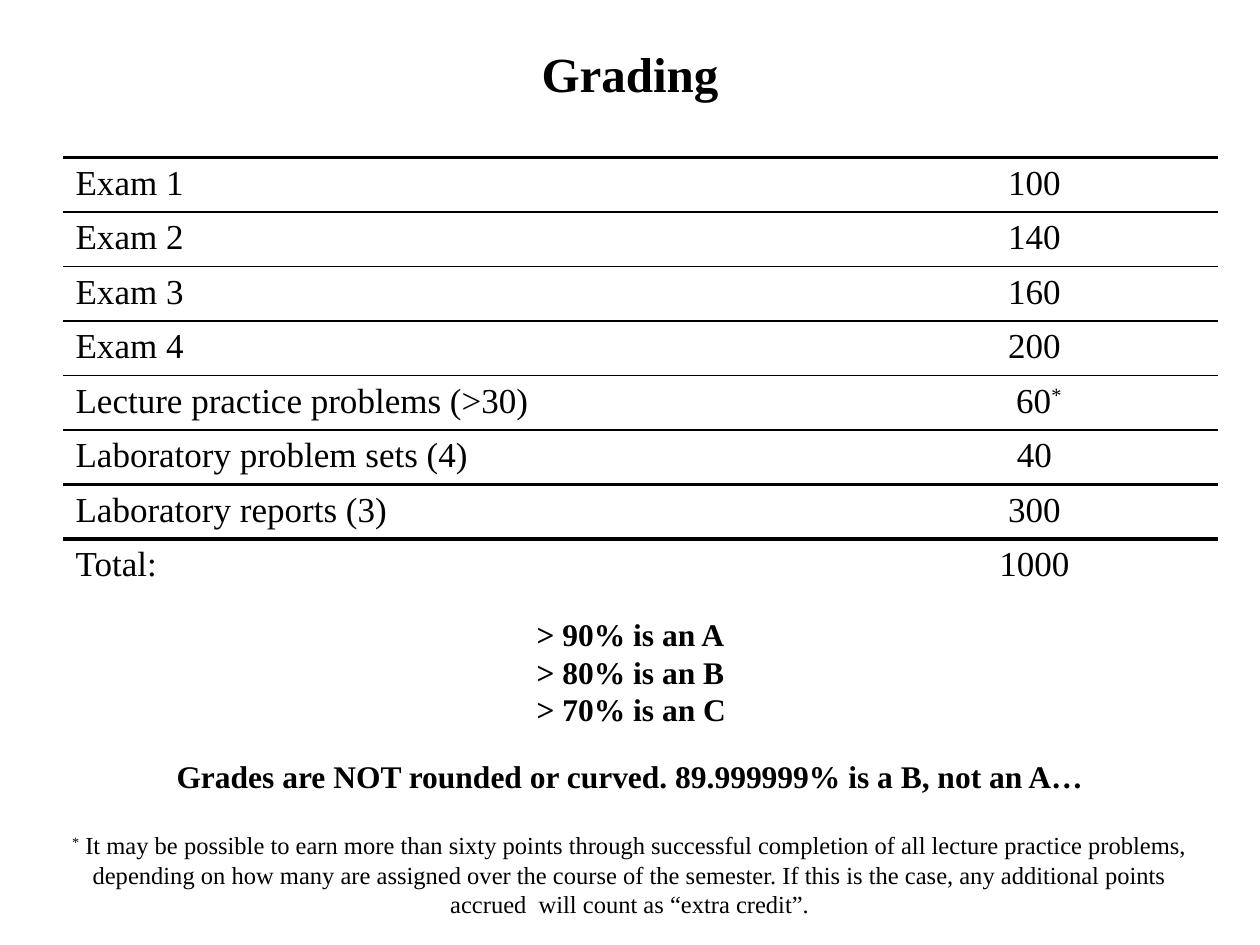
from lxml.etree import SubElement
from pptx import Presentation
from pptx.dml.color import RGBColor
from pptx.enum.text import MSO_ANCHOR as Anchor, MSO_AUTO_SIZE as AutoSize, PP_ALIGN as Align
from pptx.oxml.ns import qn
from pptx.util import Inches, Pt

BLACK = RGBColor(0x00, 0x00, 0x00)
FONT = "Times New Roman"
THIN, THICK = 1, 2.25

GRADES = [
    ("Exam 1", "100"),
    ("Exam 2", "140"),
    ("Exam 3", "160"),
    ("Exam 4", "200"),
    ("Lecture practice problems (>30)", " 60*"),
    ("Laboratory problem sets (4)", "40"),
    ("Laboratory reports (3)", "300"),
    ("Total:", "1000"),
]
# Line widths above each row, and none below the last
RULES = [THICK] + [THIN] * 5 + [THICK] * 2 + [None]

CUTOFFS = ["> 90% is an A", "> 80% is an B", "> 70% is an C"]
WARNING = ["Grades are NOT rounded or curved. 89.999999% is a B, not an A…"]
FOOTNOTE = [
    "* It may be possible to earn more than sixty points through successful "
    "completion of all lecture practice problems,",
    "depending on how many are assigned over the course of the semester. "
    "If this is the case, any additional points",
    "accrued  will count as “extra credit”.",
]


def write_paragraph(para, text, size, bold=False, align=Align.LEFT):
    """Fill a paragraph, raising any asterisk to superscript."""
    para.alignment = align
    before, star, after = text.partition("*")
    for part in filter(None, (before, star, after)):
        span = para.add_run()
        span.text = part
        span.font.name = FONT
        span.font.size = Pt(size)
        span.font.bold = bold
        span.font.color.rgb = BLACK
        if part == "*":
            span._r.get_or_add_rPr().set("baseline", "30000")


def add_title(page, text):
    title = page.shapes.title
    title.left, title.top = Inches(0), Inches(0.29)
    title.width, title.height = Inches(10), Inches(0.57)
    title.text_frame.vertical_anchor = Anchor.MIDDLE
    write_paragraph(title.text_frame.paragraphs[0], text, 28, True, Align.CENTER)


def add_text(page, left, top, width, height, lines, size,
             bold=False, align=Align.CENTER, wrap=True):
    box = page.shapes.add_textbox(Inches(left), Inches(top), Inches(width), Inches(height))
    frame = box.text_frame
    frame.word_wrap = wrap
    frame.auto_size = AutoSize.SHAPE_TO_FIT_TEXT
    for index, line in enumerate(lines):
        para = frame.add_paragraph() if index else frame.paragraphs[0]
        write_paragraph(para, line, size, bold, align)


def set_borders(cell, top, bottom):
    """Draw horizontal rules only; a width of None means no line."""
    properties = cell._tc.get_or_add_tcPr()
    for side, width in (("L", None), ("R", None), ("T", top), ("B", bottom)):
        line = SubElement(properties, qn(f"a:ln{side}"))
        if width is None:
            SubElement(line, qn("a:noFill"))
        else:
            line.set("w", str(Pt(width)))
            fill = SubElement(line, qn("a:solidFill"))
            SubElement(fill, qn("a:srgbClr")).set("val", str(BLACK))


def add_grade_table(page):
    height, total_height = 3.74, 0.71
    table = page.shapes.add_table(
        len(GRADES), 2, Inches(0.5), Inches(1.25), Inches(9.17), Inches(height)).table
    table.first_row = table.horz_banding = False
    table.columns[0].width, table.columns[1].width = Inches(6.25), Inches(2.92)

    # Equal rows for the items, a taller one for the total
    item_height = (height - total_height) / (len(GRADES) - 1)
    for index, texts in enumerate(GRADES):
        is_total = index == len(GRADES) - 1
        table.rows[index].height = Inches(total_height if is_total else item_height)
        for column, align in enumerate((Align.LEFT, Align.CENTER)):
            cell = table.cell(index, column)
            write_paragraph(cell.text_frame.paragraphs[0], texts[column], 20, align=align)
            set_borders(cell, RULES[index], RULES[index + 1])
            cell.fill.background()


def main():
    deck = Presentation()
    deck.slide_width, deck.slide_height = Inches(10), Inches(7.5)
    page = deck.slides.add_slide(deck.slide_layouts[5])

    add_title(page, "Grading")
    add_grade_table(page)

    # Grade limits and footnote
    add_text(page, 4.16, 4.83, 1.75, 1, CUTOFFS, 18, True, Align.LEFT, wrap=False)
    add_text(page, 0, 5.96, 10, 0.4, WARNING, 18, True)
    add_text(page, 0, 6.54, 10, 0.81, FOOTNOTE, 14)

    deck.save("out.pptx")


if __name__ == "__main__":
    main()
